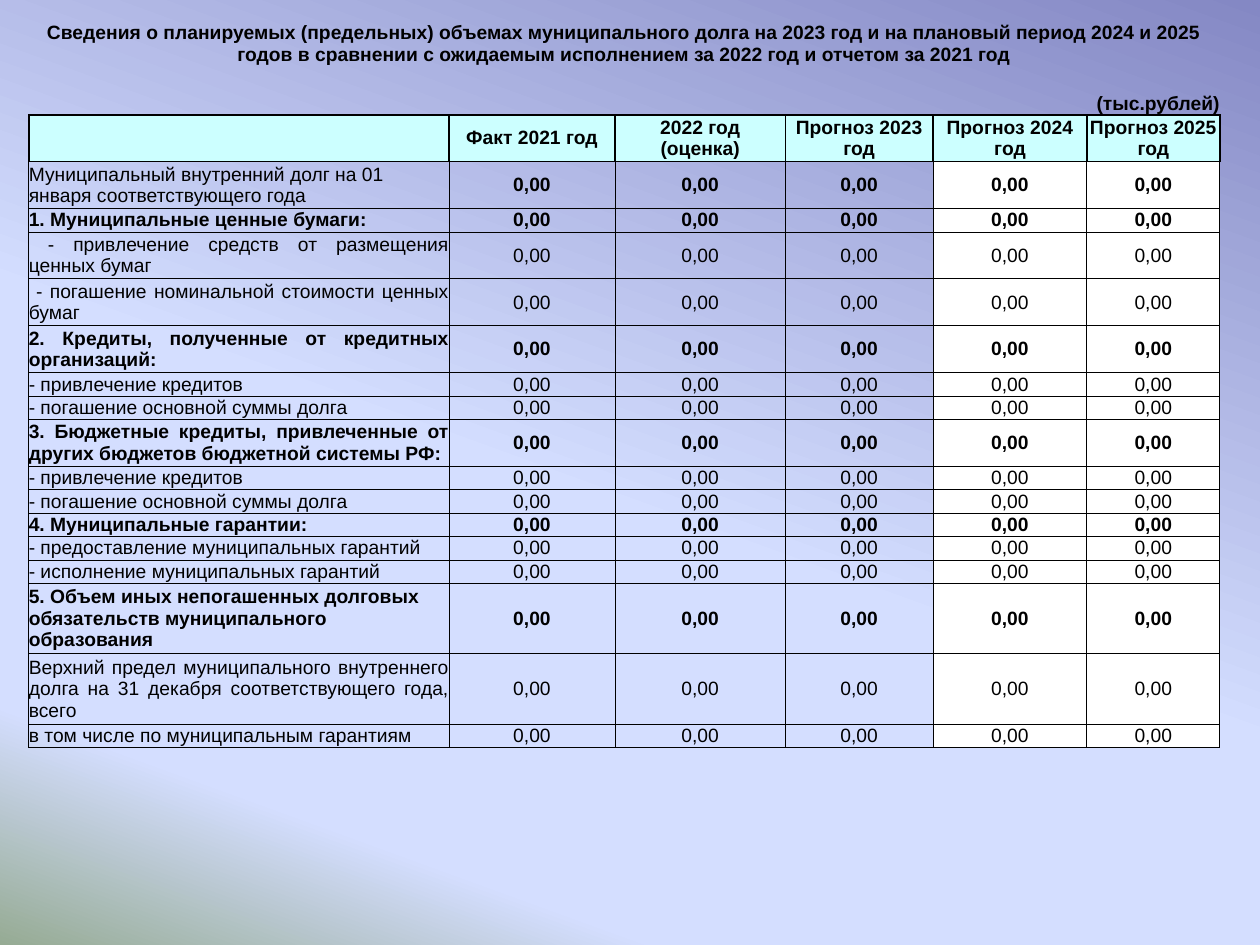
from lxml.etree import SubElement
from pptx import Presentation
from pptx.dml.color import RGBColor
from pptx.enum.text import MSO_ANCHOR, PP_ALIGN
from pptx.oxml.ns import qn
from pptx.util import Cm, Pt

COLORS = {
    "black": "000000",
    "white": "FFFFFF",
    "header": "CCFFFF",
    "violet": "8488C4",
    "sky": "D4DEFF",
    "moss": "96AB94",
}
LEFT, CENTER, RIGHT, JUSTIFY = PP_ALIGN.LEFT, PP_ALIGN.CENTER, PP_ALIGN.RIGHT, PP_ALIGN.JUSTIFY

TITLE = (
    "Сведения о планируемых (предельных) объемах муниципального долга на 2023 год "
    "и на плановый период 2024 и 2025 годов в сравнении с ожидаемым исполнением "
    "за 2022 год и отчетом за 2021 год"
)
UNIT = "(тыс.рублей)"
HEADINGS = [
    "",
    "Факт 2021 год",
    "2022 год\n(оценка)",
    "Прогноз 2023 год",
    "Прогноз 2024 год",
    "Прогноз 2025 год",
]
DEBT_ROWS = [
    ("Муниципальный внутренний долг на 01 января соответствующего года", 2, LEFT, False, True),
    ("1. Муниципальные ценные бумаги:", 1, JUSTIFY, True, True),
    (" - привлечение средств от размещения ценных бумаг", 2, JUSTIFY, False, False),
    (" - погашение номинальной стоимости ценных бумаг", 2, JUSTIFY, False, False),
    ("2. Кредиты, полученные от кредитных организаций:", 2, JUSTIFY, True, True),
    ("- привлечение кредитов", 1, JUSTIFY, False, False),
    ("- погашение основной суммы долга", 1, JUSTIFY, False, False),
    ("3. Бюджетные кредиты, привлеченные от других бюджетов бюджетной системы РФ:", 2, JUSTIFY, True, True),
    ("- привлечение кредитов", 1, JUSTIFY, False, False),
    ("- погашение основной суммы долга", 1, JUSTIFY, False, False),
    ("4. Муниципальные гарантии:", 1, LEFT, True, True),
    ("- предоставление муниципальных гарантий", 1, LEFT, False, False),
    ("- исполнение муниципальных гарантий", 1, LEFT, False, False),
    ("5. Объем иных непогашенных долговых обязательств муниципального образования", 3, LEFT, True, True),
    ("Верхний предел муниципального внутреннего долга на 31 декабря соответствующего года, всего", 3, JUSTIFY, False, False),
    ("в том числе по муниципальным гарантиям", 1, JUSTIFY, False, False),
]
VALUE = "0,00"
COLUMN_WIDTHS = [8.47, 3.35, 3.43, 2.98, 3.1, 2.68]
ROW_LINES = [2, 1, 1, 2] + [row[1] for row in DEBT_ROWS]
TABLE_HEIGHT = 14.66
FIRST_WHITE_COLUMN = 4
HEADER_ROW = 3

NO_BORDER = dict.fromkeys("LRTB", 0)
THIN_BORDER = dict.fromkeys("LRTB", 0.5)
UNIT_BORDER = {**NO_BORDER, "B": 1}
HEADER_BORDER = {"L": 1, "R": 1, "T": 1, "B": 0.5}


class DebtSlide:
    font = "Arial"
    size = 11

    def __init__(self, page):
        self.page = page

    def gradient(self, stops, angle):
        fill = self.page.background.fill
        fill.gradient()
        fill.gradient_angle = 360 - angle
        stop_list = self.page.element.find(".//" + qn("a:gsLst"))
        for old_stop in list(stop_list):
            stop_list.remove(old_stop)
        for position, color in stops:
            stop = SubElement(stop_list, qn("a:gs"), pos=str(position * 1000))
            SubElement(stop, qn("a:srgbClr"), val=COLORS[color])

    def table(self, left, top, widths, lines, height):
        width = sum(widths)
        frame = self.page.shapes.add_table(
            len(lines), len(widths), Cm(left), Cm(top), Cm(width), Cm(height)
        )
        table = frame.table
        table.first_row = table.horz_banding = False
        for column, column_width in zip(table.columns, widths):
            column.width = Cm(column_width)
        for row, count in zip(table.rows, lines):
            row.height = Cm(height * count / sum(lines))
        return table

    def cell(self, cell, text="", align=CENTER, bold=True, border=NO_BORDER, fill=None, anchor=MSO_ANCHOR.MIDDLE):
        cell.margin_left = cell.margin_right = cell.margin_top = cell.margin_bottom = 0
        cell.vertical_anchor = anchor
        self.borders(cell, border)
        if fill:
            cell.fill.solid()
            cell.fill.fore_color.rgb = RGBColor.from_string(COLORS[fill])
        else:
            cell.fill.background()
        para = cell.text_frame.paragraphs[0]
        para.alignment = align
        if not text:
            SubElement(para._p, qn("a:endParaRPr"), sz=str(self.size * 100))
            return
        for number, line in enumerate(text.split("\n")):
            if number:
                para.add_line_break()
            self.span(para, line, bold)

    def span(self, para, text, bold):
        span = para.add_run()
        span.text = text
        span.font.name = self.font
        span.font.size = Pt(self.size)
        span.font.bold = bold
        span.font.color.rgb = RGBColor.from_string(COLORS["black"])

    def borders(self, cell, border):
        properties = cell._tc.get_or_add_tcPr()
        for side, points in border.items():
            line = SubElement(properties, qn("a:ln" + side), w=str(Pt(points)))
            if points:
                solid = SubElement(line, qn("a:solidFill"))
                SubElement(solid, qn("a:srgbClr"), val=COLORS["black"])
            else:
                SubElement(line, qn("a:noFill"))


def main():
    deck = Presentation()
    deck.slide_width, deck.slide_height = Cm(25.4), Cm(19.05)
    slide = DebtSlide(deck.slides.add_slide(deck.slide_layouts[6]))
    slide.gradient([(0, "violet"), (53, "sky"), (83, "sky"), (100, "moss")], 110)

    table = slide.table(0.58, 0.41, COLUMN_WIDTHS, ROW_LINES, TABLE_HEIGHT)
    last = len(COLUMN_WIDTHS) - 1
    table.cell(0, 0).merge(table.cell(0, last))
    for column, heading in enumerate(HEADINGS):
        slide.cell(table.cell(0, column), "" if column else TITLE)
        slide.cell(table.cell(1, column))
        slide.cell(
            table.cell(2, column), UNIT if column == last else "", RIGHT,
            border=UNIT_BORDER, anchor=MSO_ANCHOR.BOTTOM,
        )
        slide.cell(table.cell(HEADER_ROW, column), heading, border=HEADER_BORDER, fill="header")

    for row, (label, _, align, bold_label, bold_value) in enumerate(DEBT_ROWS, HEADER_ROW + 1):
        slide.cell(table.cell(row, 0), label, align, bold_label, THIN_BORDER)
        for column in range(1, last + 1):
            fill = "white" if column >= FIRST_WHITE_COLUMN else None
            slide.cell(table.cell(row, column), VALUE, CENTER, bold_value, THIN_BORDER, fill)

    deck.save("out.pptx")


if __name__ == "__main__":
    main()
